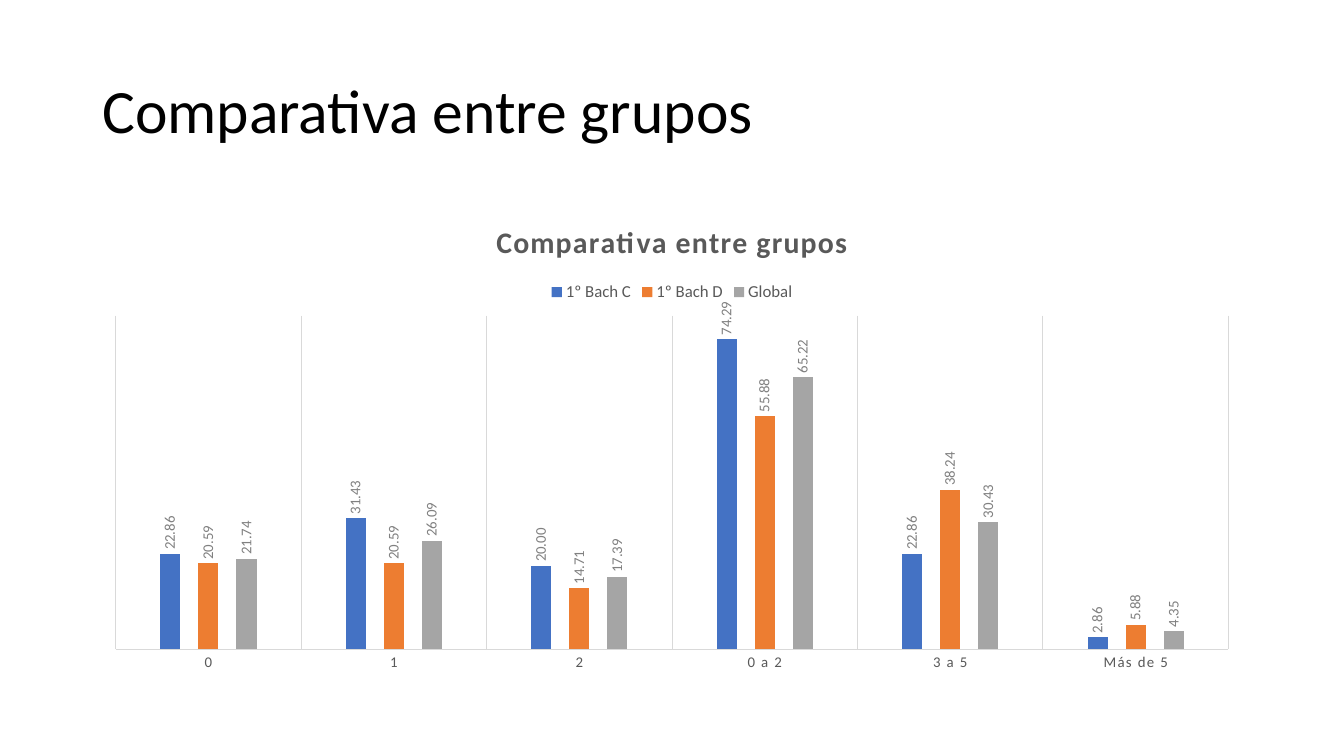
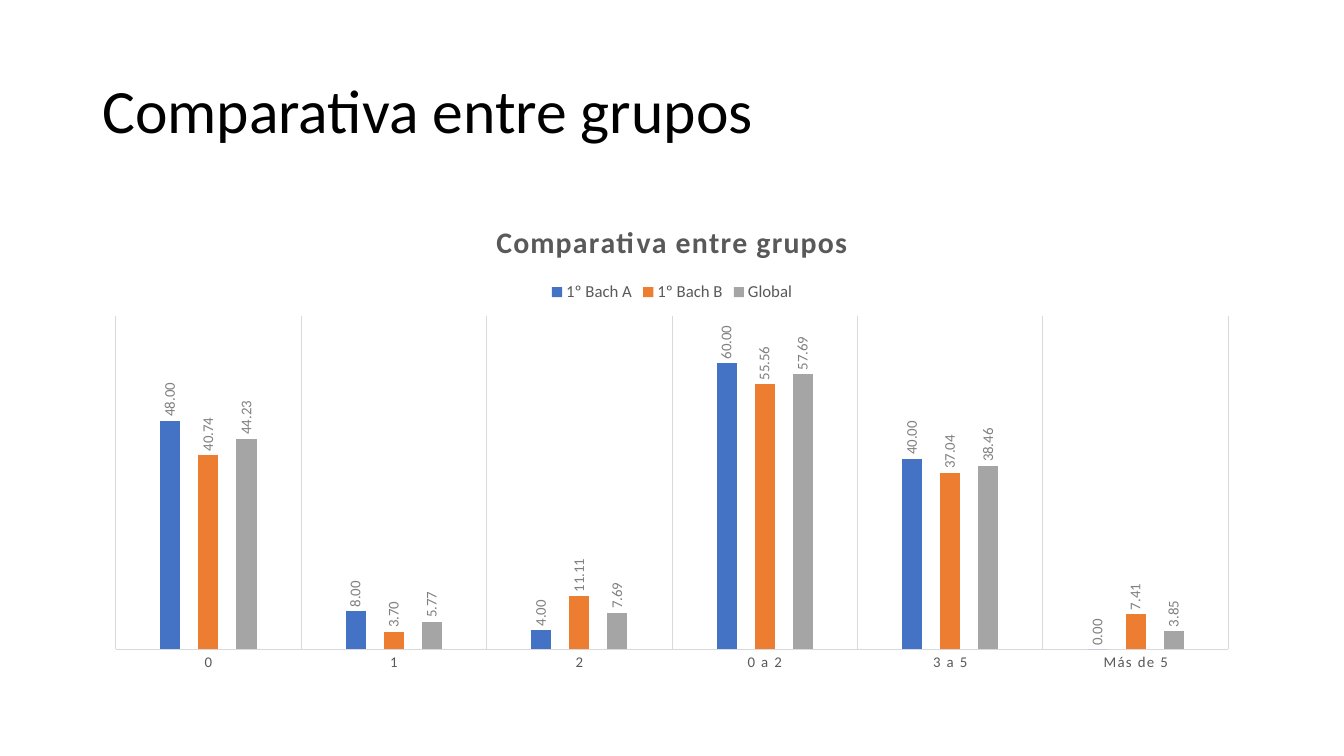
from pptx import Presentation
from pptx.chart.data import CategoryChartData as Data
from pptx.dml.color import RGBColor
from pptx.enum.chart import XL_CHART_TYPE as Kind, XL_LABEL_POSITION as Spot
from pptx.enum.chart import XL_LEGEND_POSITION as Side, XL_TICK_MARK as Tick
from pptx.enum.text import MSO_ANCHOR as Anchor
from pptx.util import Inches, Pt

TITLE = "Comparativa entre grupos"
CATS = ["0", "1", "2", "0 a 2", "3 a 5", "Más de 5"]
SLIDES = [
    (80, {
        "1º Bach C": [22.86, 31.43, 20, 74.29, 22.86, 2.86],
        "1º Bach D": [20.59, 20.59, 14.71, 55.88, 38.24, 5.88],
        "Global": [21.74, 26.09, 17.39, 65.22, 30.43, 4.35],
    }),
    (70, {
        "1º Bach A": [48, 8, 4, 60, 40, 0],
        "1º Bach B": [40.74, 3.7, 11.11, 55.56, 37.04, 7.41],
        "Global": [44.23, 5.77, 7.69, 57.69, 38.46, 3.85],
    }),
]


def tint(code):
    return RGBColor.from_string(code)


class Deck:
    """Holds the shared style and the current slide; places are percentages of the slide."""

    FACE = "Calibri"
    INK, TEXT, LABEL, RULE = "000000", "595959", "808080", "D9D9D9"
    BARS = ["4472C4", "ED7D31", "A5A5A5"]
    LEFT, WIDTH = 6.88, 86.25

    def __init__(self):
        self.prs = Presentation()
        self.prs.slide_width, self.prs.slide_height = Inches(13.33), Inches(7.5)
        self.slide = None

    def add(self):
        self.slide = self.prs.slides.add_slide(self.prs.slide_layouts[6])

    def box(self, top, high):
        wide, tall = self.prs.slide_width, self.prs.slide_height
        return [int(part * size / 100) for part, size in
                ((self.LEFT, wide), (top, tall), (self.WIDTH, wide), (high, tall))]

    def style(self, font, size, color, bold=False):
        font.name, font.size, font.bold = self.FACE, Pt(size), bold
        font.color.rgb = tint(color)

    def rule(self, line):
        line.color.rgb, line.width = tint(self.RULE), Pt(0.75)

    def title(self, text):
        frame = self.slide.shapes.add_textbox(*self.box(5.33, 19.33)).text_frame
        frame.word_wrap, frame.vertical_anchor = True, Anchor.MIDDLE
        para = frame.paragraphs[0]
        para.line_spacing = 0.9
        run = para.add_run()
        run.text = text
        self.style(run.font, 44, self.INK)

    def chart(self, head, cats, rows, top):
        data = Data(number_format="0.00")
        data.categories = cats
        for name, vals in rows.items():
            data.add_series(name, vals)
        chart = self.slide.shapes.add_chart(
            Kind.COLUMN_CLUSTERED, *self.box(26.62, 63.45), data).chart
        self.style(chart.font, 10, self.INK)
        self.head(chart, head)
        self.legend(chart)
        self.axes(chart, top)
        self.bars(chart.plots[0])
        for body in chart.element.xpath(".//c:dLbls/c:txPr/a:bodyPr"):
            body.set("rot", "-5400000")
            body.set("vert", "horz")
        for props in chart.element.xpath(".//c:title//a:rPr | .//c:catAx//a:defRPr"):
            props.set("spc", "100")

    def head(self, chart, text):
        chart.has_title = True
        chart.chart_title.include_in_layout = False
        run = chart.chart_title.text_frame.paragraphs[0].add_run()
        run.text = text
        self.style(run.font, 21.3, self.TEXT, True)

    def legend(self, chart):
        chart.has_legend = True
        chart.legend.position = Side.TOP
        chart.legend.include_in_layout = False
        self.style(chart.legend.font, 12, self.TEXT)

    def axes(self, chart, top):
        base, scale = chart.category_axis, chart.value_axis
        base.major_tick_mark = base.minor_tick_mark = Tick.NONE
        base.has_major_gridlines = True
        self.style(base.tick_labels.font, 10.6, self.TEXT)
        self.rule(base.format.line)
        self.rule(base.major_gridlines.format.line)
        scale.minimum_scale, scale.maximum_scale = 0, top
        scale.has_major_gridlines = scale.visible = False

    def bars(self, plot):
        plot.gap_width, plot.overlap, plot.vary_by_categories = 444, -90, False
        for bar, color in zip(plot.series, self.BARS):
            bar.invert_if_negative = False
            bar.format.fill.solid()
            bar.format.fill.fore_color.rgb = tint(color)
            marks = bar.data_labels
            marks.show_value, marks.position = True, Spot.OUTSIDE_END
            marks.number_format, marks.number_format_is_linked = "0.00", False
            self.style(marks.font, 10.6, self.LABEL)


def main():
    deck = Deck()
    for top, rows in SLIDES:
        deck.add()
        deck.title(TITLE)
        deck.chart(TITLE, CATS, rows, top)
    deck.prs.save("out.pptx")


if __name__ == "__main__":
    main()
